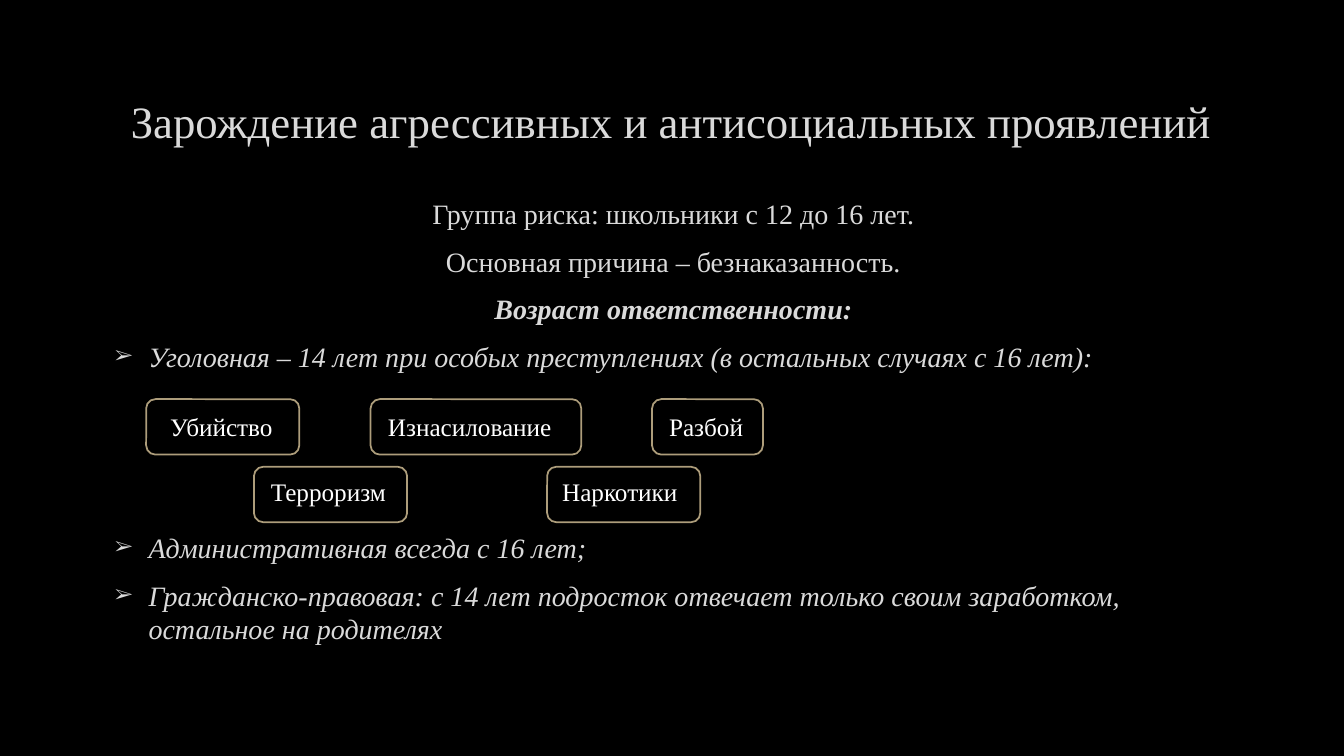
from pptx import Presentation
from pptx.dml.color import RGBColor as RGB
from pptx.enum.shapes import MSO_SHAPE as SHAPE
from pptx.enum.text import MSO_ANCHOR as ANCHOR, PP_ALIGN as ALIGN
from pptx.oxml import parse_xml
from pptx.oxml.ns import nsdecls
from pptx.util import Pt

COLORS = {"back": "000000", "text": "DADADA", "label": "FFFFFF", "border": "AD9D7B"}
FONT = "Times New Roman"
LEFT, WIDTH = 72, 815


class Deck:
    def __init__(self):
        self.prs = Presentation()
        self.prs.slide_width, self.prs.slide_height = Pt(960), Pt(540)
        self.s = self.prs.slides.add_slide(self.prs.slide_layouts[5])
        fill = self.s.background.fill
        fill.solid()
        fill.fore_color.rgb = self.color("back")

    def color(self, name):
        return RGB.from_string(COLORS[name])

    def style(self, p, size, color, bold=False, italic=False):
        p.font.name, p.font.size = FONT, Pt(size)
        p.font.bold, p.font.italic = bold, italic
        p.font.color.rgb = self.color(color)

    def title(self, text, x, y, w, h):
        sp = self.s.shapes.title
        sp.left, sp.top, sp.width, sp.height = Pt(x), Pt(y), Pt(w), Pt(h)
        tf = sp.text_frame
        tf.text = text
        tf.vertical_anchor = ANCHOR.MIDDLE
        p = tf.paragraphs[0]
        p.alignment = ALIGN.CENTER
        self.style(p, 32, "text")

    def text_box(self, x, y, w, h):
        tf = self.s.shapes.add_textbox(Pt(x), Pt(y), Pt(w), Pt(h)).text_frame
        tf.word_wrap = True
        return tf

    def indent(self, p, left, first):
        pPr = p._p.get_or_add_pPr()
        pPr.set("marL", str(Pt(left)))
        pPr.set("indent", str(Pt(first)))

    def bullet(self, p):
        ns = nsdecls("a")
        marks = (
            f'<a:buClr {ns}><a:srgbClr val="{COLORS["text"]}"/></a:buClr>',
            f'<a:buSzPct {ns} val="70000"/>',
            f'<a:buFont {ns} typeface="{FONT}"/>',
            f'<a:buChar {ns} char="➢"/>',
        )
        defaults = p._p.get_or_add_pPr().find("{*}defRPr")
        for mark in marks:
            defaults.addprevious(parse_xml(mark))

    def body(self, items, x, y, w, h):
        tf = self.text_box(x, y, w, h)
        for i, (text, bulleted, bold, italic, before) in enumerate(items):
            p = tf.paragraphs[0] if i == 0 else tf.add_paragraph()
            p.text = text
            p.space_before, p.space_after = Pt(before), Pt(6)
            self.style(p, 20, "text", bold, italic)
            if bulleted:
                self.indent(p, 27, -24)
                self.bullet(p)
            else:
                self.indent(p, 3, 0)
                p.alignment = ALIGN.CENTER

    def label(self, text, x, y, w, inset, drop):
        sp = self.s.shapes.add_shape(SHAPE.ROUNDED_RECTANGLE, Pt(x), Pt(y), Pt(w), Pt(39.6))
        sp.shadow.inherit = False
        sp.fill.background()
        sp.line.color.rgb = self.color("border")
        sp.line.width = Pt(1.25)
        tf = self.text_box(x + inset, y + drop, max(w, 109.4), 29)
        tf.text = text
        self.style(tf.paragraphs[0], 18, "label")


def main():
    deck = Deck()
    deck.title("Зарождение агрессивных и антисоциальных проявлений", LEFT, 48.2, WIDTH, 76.3)
    gap, labels_gap = 4, 106.5
    deck.body([
        ("Группа риска: школьники с 12 до 16 лет.", False, False, False, gap),
        ("Основная причина – безнаказанность.", False, False, False, gap),
        ("Возраст ответственности:", False, True, True, gap),
        ("Уголовная – 14 лет при особых преступлениях (в остальных случаях с 16 лет):",
         True, False, True, gap),
        ("Административная всегда с 16 лет;", True, False, True, labels_gap),
        ("Гражданско-правовая: с 14 лет подросток отвечает только своим заработком, "
         "остальное на родителях", True, False, True, gap),
    ], LEFT, 136.8, WIDTH, 341.3)
    rows = [
        (285.1, 5, [("Убийство", 104.4, 109.4, 10), ("Изнасилование", 264.7, 150.5, 5.3),
                    ("Разбой", 465.8, 79.2, 5)]),
        (333.4, 3.6, [("Терроризм", 181.4, 109.4, 5), ("Наркотики", 390.8, 109.4, 3.6)]),
    ]
    for y, drop, labels in rows:
        for text, x, w, inset in labels:
            deck.label(text, x, y, w, inset, drop)
    deck.prs.save("out.pptx")


if __name__ == "__main__":
    main()
